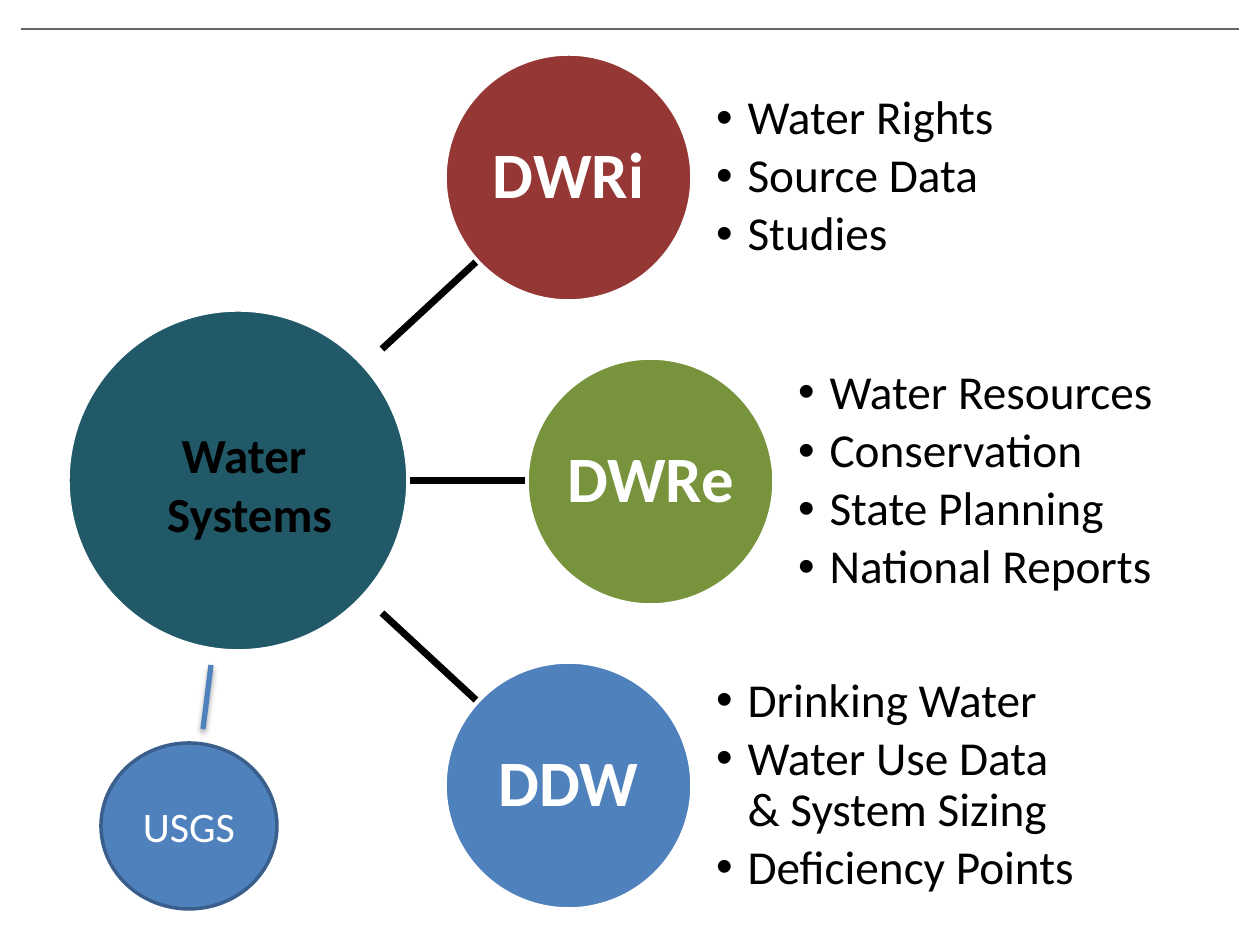
from lxml import etree
from pptx import Presentation, util as u
from pptx.dml.color import RGBColor
from pptx.enum import shapes as sh, text as tx
from pptx.oxml.ns import qn

BLACK = RGBColor(0x00, 0x00, 0x00)
WHITE = RGBColor(0xFF, 0xFF, 0xFF)
GREY = RGBColor(0x66, 0x66, 0x66)
TEAL = RGBColor(0x21, 0x59, 0x68)
RED = RGBColor(0x95, 0x37, 0x35)
GREEN = RGBColor(0x77, 0x93, 0x3C)
BLUE = RGBColor(0x4F, 0x81, 0xBD)
NAVY = RGBColor(0x3A, 0x5F, 0x8C)

PX = u.Inches(1) / 126  # 126 px to the inch


def add_line(ends, color, width):
    line = slide.shapes.add_connector(
        sh.MSO_CONNECTOR.STRAIGHT, *[round(n * PX) for n in ends])
    line.line.color.rgb = color
    line.line.width = u.Pt(width)
    return etree.SubElement(line._element.spPr, qn("a:effectLst"))


def add_text(kind, area, lines, size, color, bold=False):
    area = [round(n * PX) for n in area]
    if kind:
        shape = slide.shapes.add_shape(kind, *area)
        shape.shadow.inherit = False
    else:
        shape = slide.shapes.add_textbox(*area)
    frame = shape.text_frame
    frame.text = "\n".join(lines)
    frame.word_wrap = True
    frame.vertical_anchor = tx.MSO_ANCHOR.MIDDLE
    frame.margin_left = frame.margin_right = 0
    frame.margin_top = frame.margin_bottom = 0
    for para in frame.paragraphs:
        para.alignment = tx.PP_ALIGN.CENTER
        for run in para.runs:
            run.font.name = "Calibri"
            run.font.size = u.Pt(size)
            run.font.bold = bold
            run.font.color.rgb = color
    return shape


deck = Presentation()
deck.slide_width, deck.slide_height = round(1260 * PX), round(945 * PX)
slide = deck.slides.add_slide(deck.slide_layouts[6])
OVAL = sh.MSO_SHAPE.OVAL

# Top rule
add_line((21, 29, 1239, 29), GREY, 0.75)

# Spokes from the hub
for spoke in ((382, 613, 476, 700), (410, 481, 525, 481), (382, 349, 476, 262)):
    add_line(spoke, BLACK, 4)

# Hub
hub = add_text(OVAL, (68, 310, 340, 341), [], 28, BLACK)
hub.fill.solid()
hub.fill.fore_color.rgb = TEAL
hub.line.color.rgb = WHITE
hub.line.width = u.Pt(2)
add_text(None, (140, 418, 219, 130), ["Water ", "Systems"], 28, BLACK, True)

# Agencies, each with its list to the right
agencies = [
    ("DWRi", 445, RED, ["Water Rights", "Source Data", "Studies"]),
    ("DWRe", 527, GREEN, ["Water Resources", "Conservation",
                          "State Planning", "National Reports"]),
    ("DDW", 445, BLUE, ["Drinking Water", "Water Use Data & System Sizing",
                        "Deficiency Points"]),
]
SIZE, STEP = 247, 304
for row, (name, left, color, items) in enumerate(agencies):
    top = 54 + row * STEP
    disc = add_text(OVAL, (left, top, SIZE, SIZE), [name], 37, WHITE, True)
    disc.fill.solid()
    disc.fill.fore_color.rgb = color
    disc.line.color.rgb = WHITE
    disc.line.width = u.Pt(2)
    disc.text_frame.paragraphs[0].line_spacing = 0.9

    notes = add_text(None, (left + 271, top, 370, SIZE), items, 27, BLACK)
    for para in notes.text_frame.paragraphs:
        para.alignment = tx.PP_ALIGN.LEFT
        para.line_spacing = 0.9
        para.space_after = u.Pt(4)
        props = para._p.get_or_add_pPr()
        props.set("marL", str(u.Inches(0.25)))
        props.set("indent", str(-u.Inches(0.25)))
        etree.SubElement(props, qn("a:buFont"), typeface="Arial")
        etree.SubElement(props, qn("a:buChar"), char="•")

# Federal partner with its shadowed link
usgs = add_text(OVAL, (101, 743, 176, 166), ["USGS"], 24, WHITE)
usgs.fill.solid()
usgs.fill.fore_color.rgb = BLUE
usgs.line.color.rgb = NAVY
usgs.line.width = u.Pt(2)
glow = add_line((211, 665, 203, 729), BLUE, 3)
shade = etree.SubElement(
    glow, qn("a:outerShdw"), blurRad=str(u.Pt(3.1)), dist=str(u.Pt(1.8)),
    dir="5400000", rotWithShape="0")
tint = etree.SubElement(shade, qn("a:srgbClr"), val=str(BLACK))
etree.SubElement(tint, qn("a:alpha"), val="35000")

deck.save("out.pptx")
